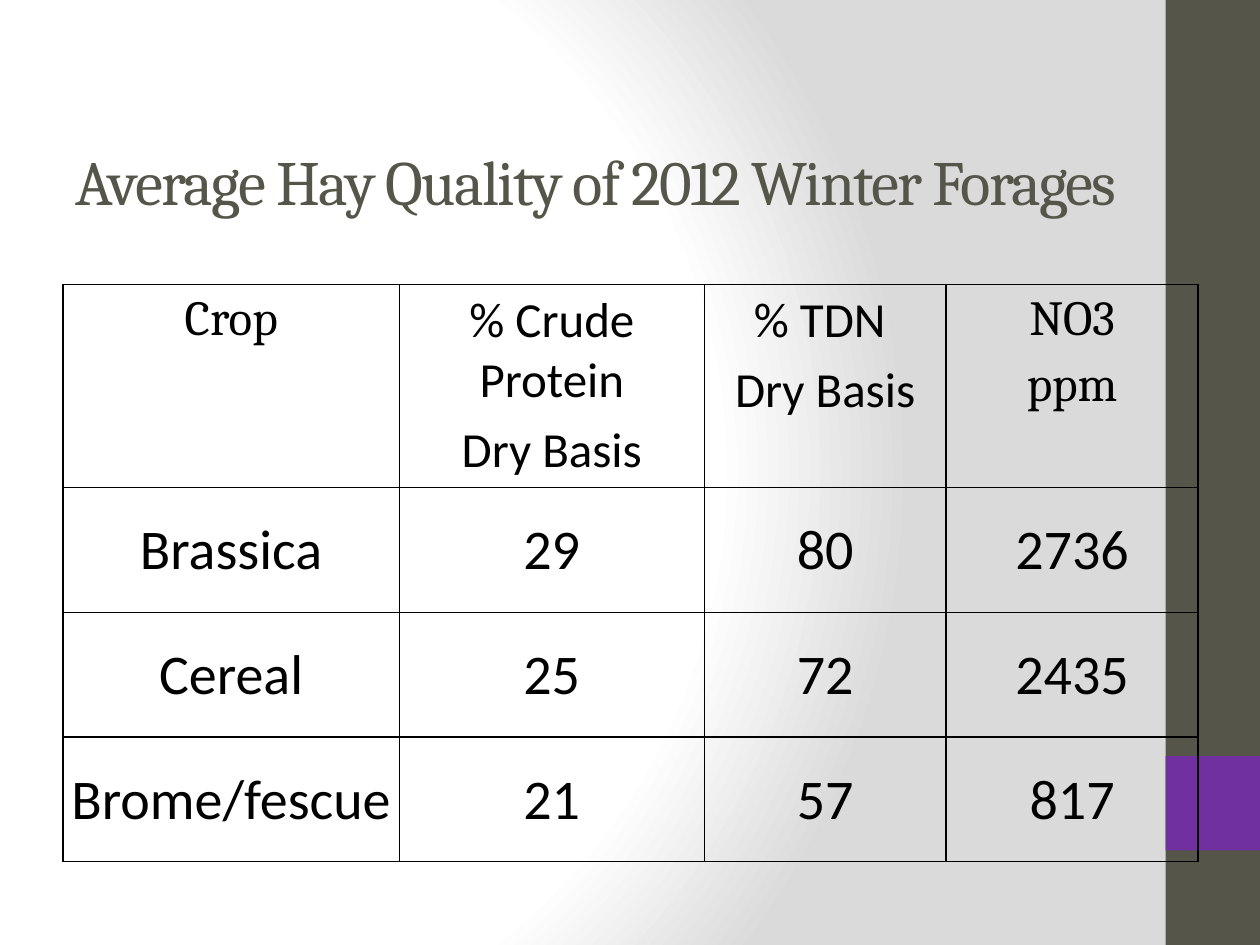
from pptx import Presentation, oxml, util as u
from pptx.dml.color import RGBColor
from pptx.enum import shapes, text
from pptx.oxml.ns import nsdecls

COLORS = {"olive": "55554A", "purple": "7030A0", "ink": "000000",
          "light": "FFFFFF", "shade": "DADADA"}
TITLE = "Average Hay Quality of 2012 Winter Forages"
HEADERS = [("Cambria", ["Crop"]),
           ("Calibri", ["% Crude Protein", "Dry Basis"]),
           ("Calibri", ["% TDN ", "Dry Basis"]),
           ("Cambria", ["NO3", "ppm"])]
CROPS = [("Brassica", "29", "80", "2736"),
         ("Cereal", "25", "72", "2435"),
         ("Brome/fescue", "21", "57", "817")]

WIDTH, HEIGHT = 10, 7.5
MARGIN = WIDTH / 20
SIDEBAR = HEIGHT / 10
COLUMNS = [2.67, 2.42, 1.92, 2]
ROWS = [1.61] + [0.99] * len(CROPS)
TABLE_TOP = 2.26
HEADER_INSETS = (0.1, 0.05, 0.1, 0.05)
BODY_INSETS = (0.01, 0.01, 0.01, 0)
SIDES = ("left", "top", "right", "bottom")


def rgb(name):
    return RGBColor.from_string(COLORS[name])


def set_attributes(target, values):
    for name, value in values.items():
        setattr(target, name, value)


def set_background(slide):
    stops = "".join(
        f'<a:gs pos="{position * 1000}"><a:srgbClr val="{COLORS[name]}"/></a:gs>'
        for position, name in [(0, "light"), (75, "light"), (100, "shade")])
    slide._element.cSld.insert(0, oxml.parse_xml(
        f'<p:bg {nsdecls("p", "a")}><p:bgPr><a:gradFill rotWithShape="1">'
        f'<a:gsLst>{stops}</a:gsLst><a:path path="circle">'
        '<a:fillToRect l="20000" t="50000" r="100000" b="50000"/></a:path>'
        '</a:gradFill><a:effectLst/></p:bgPr></p:bg>'))


def add_band(slide, top, height, color):
    band = slide.shapes.add_shape(
        shapes.MSO_SHAPE.RECTANGLE,
        *map(u.Inches, (WIDTH - SIDEBAR, top, SIDEBAR, height)))
    band.shadow.inherit = False
    band.fill.solid()
    band.fill.fore_color.rgb = rgb(color)
    band.line.fill.background()


def add_title(slide):
    title = slide.shapes.title
    slide.shapes._spTree.append(title._element)
    box = zip(("left", "top", "width", "height"),
              (MARGIN, 0.81, WIDTH - 2 * MARGIN, 1.25))
    set_attributes(title, {name: u.Inches(value) for name, value in box})
    set_attributes(title.text_frame, {
        "text": TITLE, "word_wrap": True,
        "vertical_anchor": text.MSO_ANCHOR.MIDDLE})
    paragraph = title.text_frame.paragraphs[0]
    paragraph.alignment = text.PP_ALIGN.LEFT
    run = paragraph.runs[0]
    set_attributes(run.font, {"name": "Cambria", "size": u.Pt(36)})
    run.font.color.rgb = rgb("olive")
    run._r.get_or_add_rPr().set("spc", "-100")


def fill_cell(cell, lines, font, size, insets, anchor):
    cell.fill.background()
    cell.vertical_anchor = anchor
    set_attributes(cell, {f"margin_{side}": u.Inches(inset)
                          for side, inset in zip(SIDES, insets)})
    properties = cell._tc.get_or_add_tcPr()
    for index, side in enumerate("LRTB"):
        properties.insert(index, oxml.parse_xml(
            f'<a:ln{side} {nsdecls("a")} w="12700"><a:solidFill>'
            f'<a:srgbClr val="{COLORS["ink"]}"/></a:solidFill></a:ln{side}>'))
    cell.text = "\n".join(lines)
    for index, paragraph in enumerate(cell.text_frame.paragraphs):
        paragraph.alignment = text.PP_ALIGN.CENTER
        if index:
            paragraph.space_before = u.Pt(size * 0.2)
        set_attributes(paragraph.font,
                       {"name": font, "size": u.Pt(size), "bold": False})
        paragraph.font.color.rgb = rgb("ink")


def add_quality_table(slide):
    table = slide.shapes.add_table(
        len(ROWS), len(COLUMNS), *map(
            u.Inches, (MARGIN, TABLE_TOP, sum(COLUMNS), sum(ROWS)))).table
    set_attributes(table, {"first_row": False, "horz_banding": False})
    for column, width in zip(table.columns, COLUMNS):
        column.width = u.Inches(width)
    for row, height in zip(table.rows, ROWS):
        row.height = u.Inches(height)
    for index, (font, lines) in enumerate(HEADERS):
        fill_cell(table.cell(0, index), lines, font, 28,
                  HEADER_INSETS, text.MSO_ANCHOR.TOP)
    for row, crop in enumerate(CROPS, 1):
        for index, value in enumerate(crop):
            fill_cell(table.cell(row, index), [value], "Calibri", 32,
                      BODY_INSETS, text.MSO_ANCHOR.MIDDLE)


def main():
    presentation = Presentation()
    presentation.slide_width = u.Inches(WIDTH)
    presentation.slide_height = u.Inches(HEIGHT)
    slide = presentation.slides.add_slide(presentation.slide_layouts[5])
    set_background(slide)
    add_band(slide, 0, HEIGHT, "olive")
    add_band(slide, HEIGHT * 0.8, SIDEBAR, "purple")
    add_title(slide)
    add_quality_table(slide)
    presentation.save("out.pptx")


if __name__ == "__main__":
    main()
